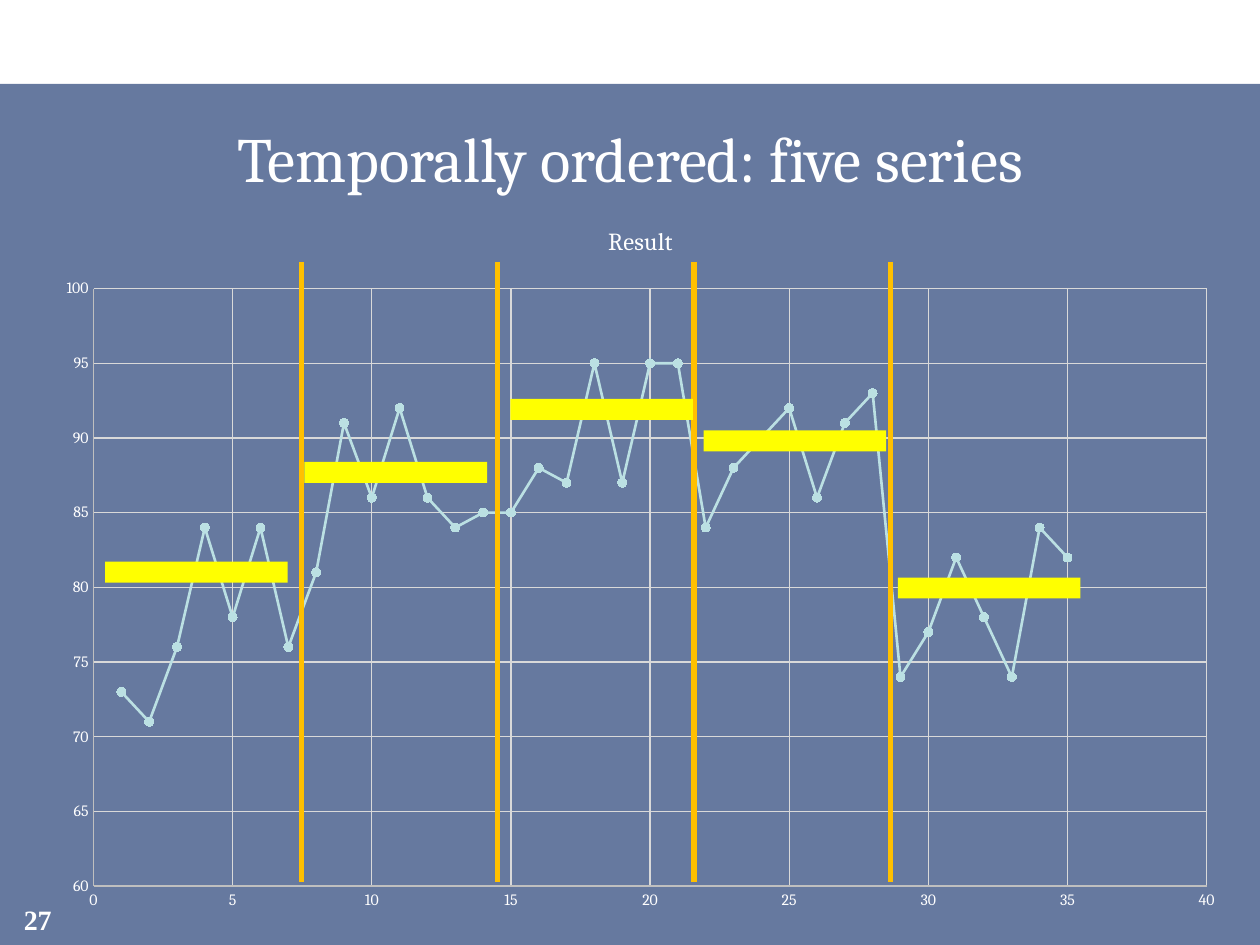
from dataclasses import dataclass

from lxml.etree import SubElement
from pptx import Presentation
from pptx.chart.data import XyChartData
from pptx.dml.color import RGBColor
from pptx.enum.chart import XL_CHART_TYPE as ChartType
from pptx.enum.chart import XL_MARKER_STYLE as MarkerStyle
from pptx.enum.chart import XL_TICK_MARK as TickMark
from pptx.enum.shapes import MSO_CONNECTOR as Connector
from pptx.enum.shapes import MSO_SHAPE as Shape
from pptx.enum.text import MSO_ANCHOR as Anchor
from pptx.enum.text import PP_ALIGN as Align
from pptx.oxml import parse_xml
from pptx.oxml.ns import nsdecls, qn
from pptx.util import Inches, Pt


@dataclass(frozen=True)
class Theme:
    panel: str = "002060"
    text: str = "FFFFFF"
    axis: str = "BFBFBF"
    grid: str = "D9D9D9"
    series: str = "BBE0E3"
    divider: str = "FFC000"
    mean: str = "FFFF00"
    font: str = "Cambria"
    number_font: str = "Times New Roman"
    title_size: int = 36
    number_size: int = 16
    chart_title_size: int = 14
    chart_size: int = 10
    axis_size: int = 9


THEME = Theme()
CELLS_PER_INCH = 12  # the slide is a grid of 120 columns by 90 rows

RESULTS = [  # one row for each of the five series
    [73, 71, 76, 84, 78, 84, 76],
    [81, 91, 86, 92, 86, 84, 85],
    [85, 88, 87, 95, 87, 95, 95],
    [84, 88, 90, 92, 86, 91, 93],
    [74, 77, 82, 78, 74, 84, 82],
]
MEAN_BARS = [(10, 53.5), (29, 44), (48.6, 38), (67, 41), (85.5, 55)]
FIRST_DIVIDER, DIVIDER_STEP = 28.7, 18.7


def cells(*counts):
    return [Inches(count / CELLS_PER_INCH) for count in counts]


def color(value):
    return RGBColor.from_string(value)


def style_font(font, size, name=THEME.font, bold=False):
    font.size = Pt(size)
    font.name = name
    font.bold = bold
    font.color.rgb = color(THEME.text)


def style_line(line, value, width):
    line.color.rgb = color(value)
    line.width = Pt(width)


def add_block(slide, box, fill, alpha=None):
    """Add a plain rectangle; alpha is its opacity in percent."""
    block = slide.shapes.add_shape(Shape.RECTANGLE, *cells(*box))
    block.shadow.inherit = False
    block.fill.solid()
    block.fill.fore_color.rgb = color(fill)
    block.line.fill.background()
    if alpha is not None:
        fill_color = block.fill._xPr.find(".//" + qn("a:srgbClr"))
        SubElement(fill_color, qn("a:alpha")).set("val", str(alpha * 1000))


def add_label(slide, box, text, size, **font_options):
    frame = slide.shapes.add_textbox(*cells(*box)).text_frame
    frame.word_wrap = True
    frame.vertical_anchor = Anchor.MIDDLE
    frame.text = text
    paragraph = frame.paragraphs[0]
    paragraph.alignment = Align.CENTER
    style_font(paragraph.runs[0].font, size, **font_options)


def add_divider(slide, column, top, bottom):
    line = slide.shapes.add_connector(Connector.STRAIGHT, *cells(column, top, column, bottom))
    style_line(line.line, THEME.divider, 3)
    SubElement(line._element.spPr, qn("a:effectLst"))


def style_axis(axis, low, high, step):
    axis.minimum_scale, axis.maximum_scale, axis.major_unit = low, high, step
    axis.major_tick_mark = axis.minor_tick_mark = TickMark.NONE
    axis.has_major_gridlines = True
    style_line(axis.major_gridlines.format.line, THEME.grid, 0.75)
    style_line(axis.format.line, THEME.axis, 0.75)
    style_font(axis.tick_labels.font, THEME.axis_size)


def set_plot_layout(chart, x, y, w, h):
    """Fix the inner plot area, in shares of the chart, so the overlays line up."""
    plot_area = chart._chartSpace.chart.plotArea
    for layout in plot_area.findall(qn("c:layout")):
        plot_area.remove(layout)
    sizes = "".join(
        f'<c:{key} val="{value}"/>' for key, value in dict(x=x, y=y, w=w, h=h).items()
    )
    plot_area.insert(0, parse_xml(
        f'<c:layout {nsdecls("c")}><c:manualLayout><c:layoutTarget val="inner"/>'
        f'<c:xMode val="edge"/><c:yMode val="edge"/>{sizes}</c:manualLayout></c:layout>'
    ))


def add_result_chart(slide, box):
    data = XyChartData()
    points = data.add_series("Result")
    values = [value for row in RESULTS for value in row]
    for position, value in enumerate(values, start=1):
        points.add_data_point(position, value)
    chart = slide.shapes.add_chart(ChartType.XY_SCATTER_LINES, *cells(*box), data).chart
    style_font(chart.font, THEME.chart_size)
    chart.has_legend = False
    chart.has_title = True
    title = chart.chart_title
    title.include_in_layout = False
    title.text_frame.text = "Result"
    style_font(title.text_frame.paragraphs[0].runs[0].font, THEME.chart_title_size)
    style_axis(chart.category_axis, 0, 40, 5)
    style_axis(chart.value_axis, 60, 100, 5)
    set_plot_layout(chart, x=0.043, y=0.123, w=0.93, h=0.825)

    plot = chart.plots[0]
    plot.vary_by_categories = False
    series = plot.series[0]
    series.smooth = False
    style_line(series.format.line, THEME.series, 1.5)
    series.marker.style = MarkerStyle.CIRCLE
    series.marker.size = 5
    series.marker.format.fill.solid()
    series.marker.format.fill.fore_color.rgb = color(THEME.series)
    style_line(series.marker.format.line, THEME.series, 0.75)


def main():
    presentation = Presentation()
    presentation.slide_width, presentation.slide_height = cells(120, 90)
    slide = presentation.slides.add_slide(presentation.slide_layouts[6])

    add_block(slide, (0, 8, 120, 82), THEME.panel, alpha=60)
    add_label(slide, (0, 85.2, 7.2, 4.8), "27", THEME.number_size,
              name=THEME.number_font, bold=True)
    add_label(slide, (3, 10, 114, 10), "Temporally ordered: five series", THEME.title_size)
    add_result_chart(slide, (4, 19, 114, 69))
    for index in range(len(RESULTS) - 1):
        add_divider(slide, FIRST_DIVIDER + index * DIVIDER_STEP, 25, 84)
    for column, row in MEAN_BARS:
        add_block(slide, (column, row, 17.4, 2), THEME.mean)

    presentation.save("out.pptx")


if __name__ == "__main__":
    main()
